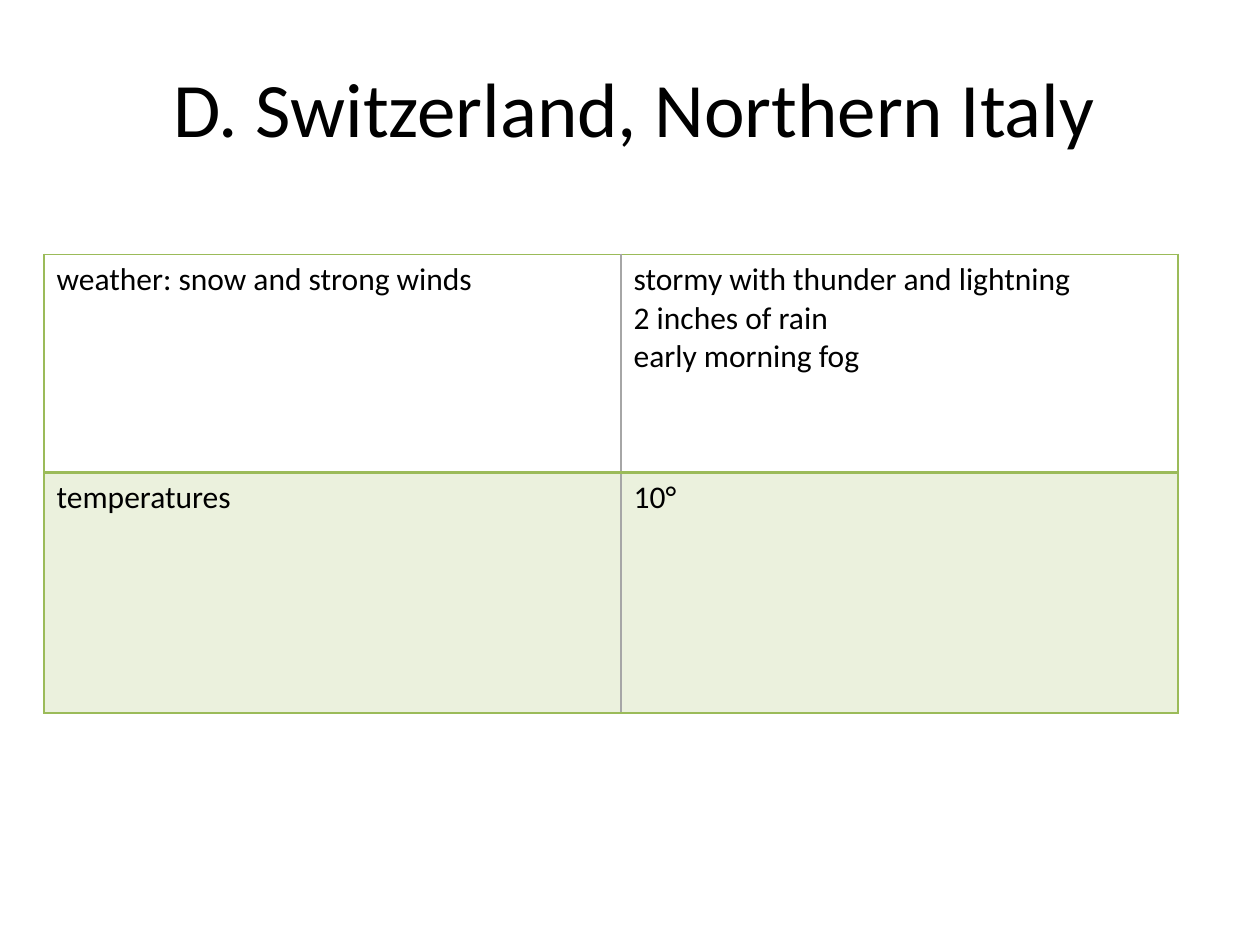
from lxml.etree import SubElement as Sub
from pptx import Presentation as Deck
from pptx.dml.color import RGBColor as Rgb
from pptx.enum.text import MSO_ANCHOR as Anchor, PP_ALIGN as Align
from pptx.oxml.ns import qn
from pptx.util import Cm, Pt

HUES = {"ink": "000000", "green": "9BBB59", "gray": "A6A6A6"}
TITLE = "D. Switzerland, Northern Italy"
ROWS = [
    ["weather: snow and strong winds",
     "stormy with thunder and lightning\n2 inches of rain\nearly morning fog"],
    ["temperatures", "10°"],
]
WIDTHS = [11.63, 11.23]
HEIGHTS = [4.39, 4.85]


class Page:
    def __init__(self, slide, face="Calibri"):
        self.slide = slide
        self.face = face

    def label(self, frame, text, size, align):
        frame.text = text
        form = {"name": self.face, "size": Pt(size), "bold": False}
        for para in frame.paragraphs:
            para.alignment = align
            for run in para.runs:
                for key, value in form.items():
                    setattr(run.font, key, value)
                run.font.color.rgb = Rgb.from_string(HUES["ink"])

    def title(self, text, box):
        frame = self.slide.shapes.add_textbox(*map(Cm, box)).text_frame
        form = {"word_wrap": True, "vertical_anchor": Anchor.MIDDLE}
        for key, value in form.items():
            setattr(frame, key, value)
        self.label(frame, text, 44, Align.CENTER)

    def edge(self, cell, side, hue, width):
        line = Sub(cell._tc.get_or_add_tcPr(), qn(f"a:ln{side}"),
                   w=str(Pt(width)))
        fill = Sub(line, qn("a:solidFill"))
        Sub(fill, qn("a:srgbClr"), val=HUES[hue])

    def tint(self, cell, hue, share):
        """Fill a cell with a colour that is share percent opaque."""
        cell.fill.solid()
        cell.fill.fore_color.rgb = Rgb.from_string(HUES[hue])
        tone = cell._tc.tcPr.find(f"{qn('a:solidFill')}/{qn('a:srgbClr')}")
        Sub(tone, qn("a:alpha"), val=str(share * 1000))

    def table(self, rows, left, top, widths, heights):
        grid = self.slide.shapes.add_table(
            len(rows), len(widths), Cm(left), Cm(top),
            Cm(sum(widths)), Cm(sum(heights))).table
        for key in ("first_row", "horz_banding"):
            setattr(grid, key, False)
        for col, width in zip(grid.columns, widths):
            col.width = Cm(width)
        for row, height in zip(grid.rows, heights):
            row.height = Cm(height)
        for r, texts in enumerate(rows):
            for c, text in enumerate(texts):
                cell = grid.cell(r, c)
                self.label(cell.text_frame, text, 18, Align.LEFT)
                edges = {
                    "L": ("gray" if c else "green", 1),
                    "R": ("gray" if c < len(widths) - 1 else "green", 1),
                    "T": ("green", 2 if r else 1),
                    "B": ("green", 2 if r < len(rows) - 1 else 1),
                }
                for side, (hue, width) in edges.items():
                    self.edge(cell, side, hue, width)
                if r % 2:
                    self.tint(cell, "green", 20)
                else:
                    cell.fill.background()


def main():
    deck = Deck()
    deck.slide_width, deck.slide_height = Cm(25.4), Cm(19.05)
    page = Page(deck.slides.add_slide(deck.slide_layouts[6]))
    page.title(TITLE, (1.27, 0.76, 23.04, 2.77))
    page.table(ROWS, 0.89, 5.13, WIDTHS, HEIGHTS)
    deck.save("out.pptx")


if __name__ == "__main__":
    main()
